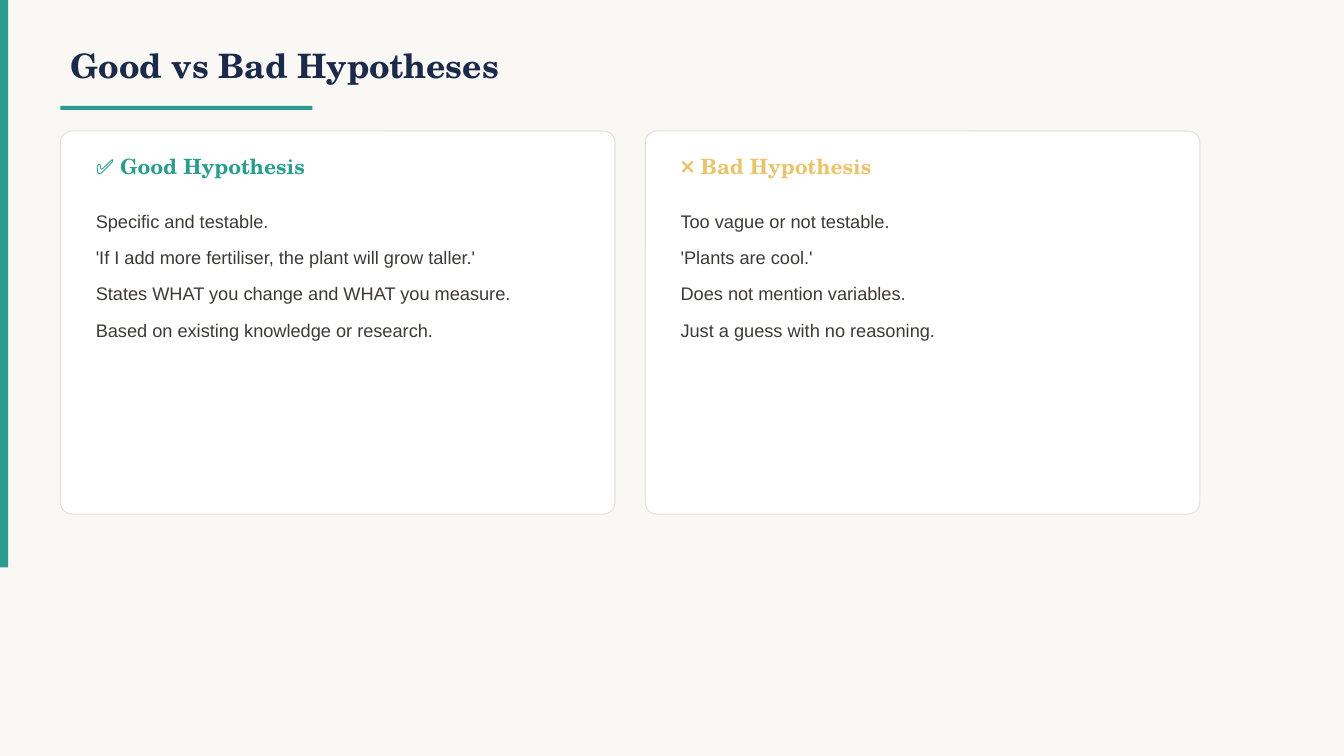
from lxml import etree
from pptx import Presentation
from pptx.dml.color import RGBColor
from pptx.enum.shapes import MSO_SHAPE
from pptx.enum.text import MSO_ANCHOR, MSO_AUTO_SIZE, PP_ALIGN
from pptx.oxml.ns import qn
from pptx.util import Inches, Pt

RECTANGLE, ROUNDED = MSO_SHAPE.RECTANGLE, MSO_SHAPE.ROUNDED_RECTANGLE
TOP, MIDDLE = MSO_ANCHOR.TOP, MSO_ANCHOR.MIDDLE
LEFT = PP_ALIGN.LEFT
NO_FIT = MSO_AUTO_SIZE.NONE
COMPARISON_LAYOUT = 4

SERIF, SANS = "TeX Gyre Schola", "Arial"
PAPER, WHITE, BORDER = "FAF8F5", "FFFFFF", "E5E2DC"
NAVY, TEAL, GOLD, INK = "1B2A4A", "2A9D8F", "E9C46A", "3D3A36"

MARGIN = 0.6
CARD_TOP, CARD_WIDTH, CARD_HEIGHT, CARD_GAP = 1.3, 5.5, 3.8, 0.3
CARD_PADDING = 0.25

CARDS = [
    ("✅ Good Hypothesis", TEAL, [
        "Specific and testable.",
        "'If I add more fertiliser, the plant will grow taller.'",
        "States WHAT you change and WHAT you measure.",
        "Based on existing knowledge or research.",
    ]),
    ("❌ Bad Hypothesis", GOLD, [
        "Too vague or not testable.",
        "'Plants are cool.'",
        "Does not mention variables.",
        "Just a guess with no reasoning.",
    ]),
]


def color(value):
    """Turn a hex string into a colour."""
    return RGBColor.from_string(value)


def add_block(slide, kind, box, fill, line=None):
    """Add a filled shape in a box given in inches."""
    shape = slide.shapes.add_shape(kind, *map(Inches, box))
    shape.shadow.inherit = False
    shape.fill.solid()
    shape.fill.fore_color.rgb = color(fill)
    if line:
        shape.line.color.rgb = color(line)
        shape.line.width = Pt(0.75)
    else:
        shape.line.fill.background()
    return shape


def fill_placeholder(placeholder, box, lines, size, font_name, ink,
                     bold=False, anchor=MIDDLE, spacing=1.0, after=0):
    """Place a placeholder in front and write its lines without bullets."""
    placeholder.left, placeholder.top, placeholder.width, placeholder.height = map(Inches, box)
    placeholder.element.getparent().append(placeholder.element)
    frame = placeholder.text_frame
    frame.text = "\n".join(lines)
    frame.word_wrap = True
    frame.auto_size = NO_FIT
    frame.vertical_anchor = anchor
    for paragraph in frame.paragraphs:
        paragraph.alignment = LEFT
        paragraph.line_spacing = spacing
        paragraph.space_before = Pt(0)
        paragraph.space_after = Pt(after)
        properties = paragraph._p.get_or_add_pPr()
        properties.set("marL", "0")
        properties.set("indent", "0")
        etree.SubElement(properties, qn("a:buNone"))
        paragraph.font.name = font_name
        paragraph.font.size = Pt(size)
        paragraph.font.bold = bold
        paragraph.font.color.rgb = color(ink)


def add_header(slide, box):
    """Write the title and the rule below it."""
    left, top, width, height = box
    fill_placeholder(slide.shapes.title, box, ["Good vs Bad Hypotheses"], 24, SERIF, NAVY, bold=True)
    add_block(slide, RECTANGLE, (left, top + height + 0.05, 2.5, 0.04), TEAL)


def add_card(slide, box, heading_placeholder, body_placeholder, heading, accent, lines):
    """Draw a card with a heading and a list."""
    left, top, width, height = box
    card = add_block(slide, ROUNDED, box, WHITE, BORDER)
    card.adjustments[0] = 0.03
    text_left, text_width = left + CARD_PADDING, width - 2 * CARD_PADDING
    fill_placeholder(heading_placeholder, (text_left, top + 0.15, text_width, 0.4),
                     [heading], 15, SERIF, accent, bold=True)
    fill_placeholder(body_placeholder, (text_left, top + 0.65, text_width, height - 0.9),
                     lines, 13, SANS, INK, anchor=TOP, spacing=1.4, after=4)


def main():
    """Build the slide and save it."""
    presentation = Presentation()
    presentation.slide_width, presentation.slide_height = Inches(13.33), Inches(7.5)
    slide = presentation.slides.add_slide(presentation.slide_layouts[COMPARISON_LAYOUT])
    slide.background.fill.solid()
    slide.background.fill.fore_color.rgb = color(PAPER)
    add_block(slide, RECTANGLE, (0, 0, 0.08, 5.63), TEAL)
    add_header(slide, (MARGIN, 0.3, 10, 0.7))
    placeholders = slide.placeholders
    for column, (heading, accent, lines) in enumerate(CARDS):
        left = MARGIN + column * (CARD_WIDTH + CARD_GAP)
        add_card(slide, (left, CARD_TOP, CARD_WIDTH, CARD_HEIGHT),
                 placeholders[1 + 2 * column], placeholders[2 + 2 * column],
                 heading, accent, lines)
    presentation.save("out.pptx")


if __name__ == "__main__":
    main()
